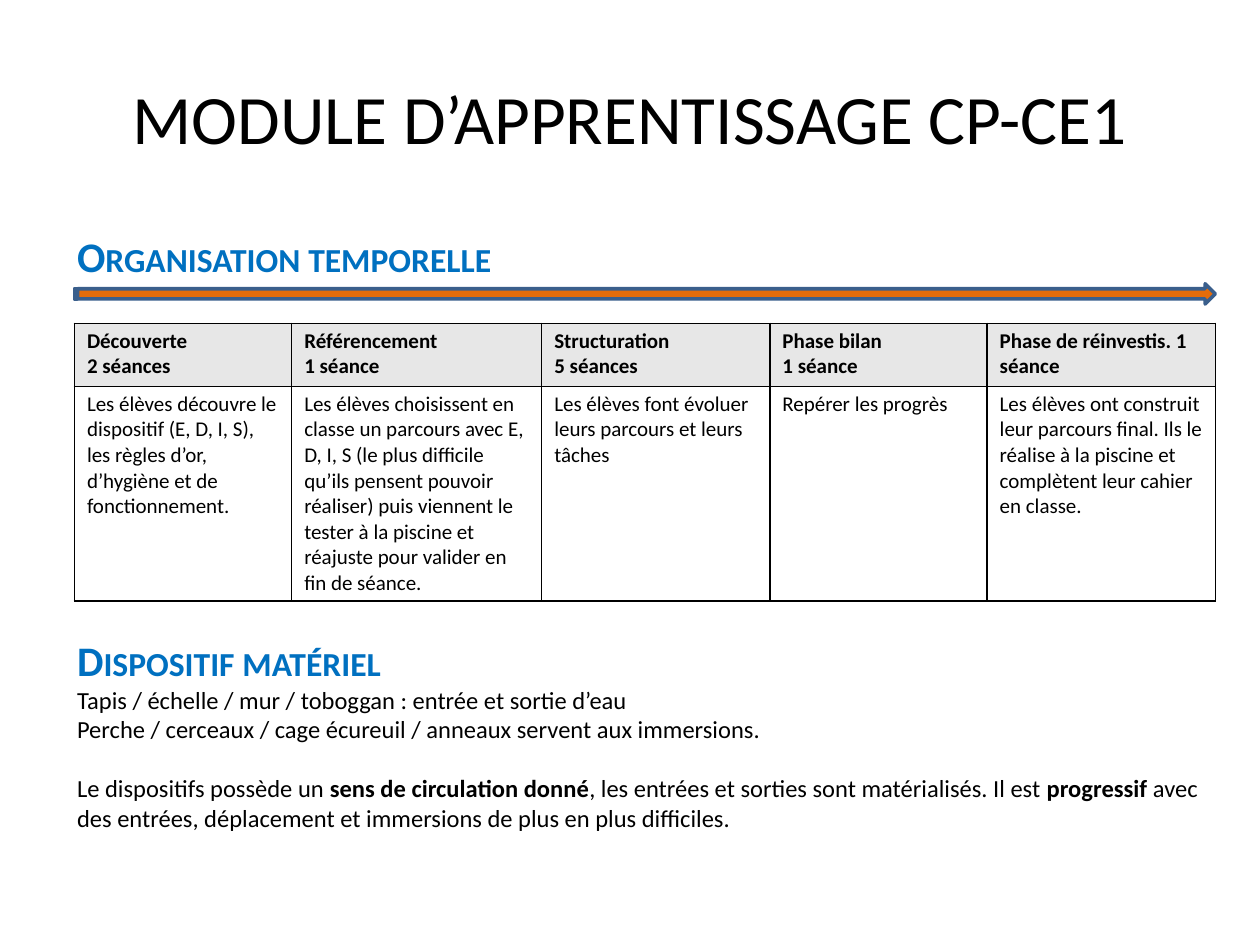
from lxml import etree
from pptx import Presentation
from pptx import util as u
from pptx.dml.color import RGBColor
from pptx.enum import shapes, text
from pptx.oxml.ns import qn

FONT, BLACK, BLUE = "Calibri", "000000", "0070C0"
TITLE = "MODULE D’APPRENTISSAGE CP-CE1"
HEAD = dict(size=24, tint=BLUE, bold=True, caps=True)
BODY = [
    (0, [("Organisation temporelle", HEAD)]),
    (202, [("Dispositif matériel", HEAD)]),
    (0, [("Tapis / échelle / mur / toboggan : entrée et sortie d’eau", {})]),
    (0, [("Perche / cerceaux / cage écureuil / anneaux servent aux immersions.", {})]),
    (17, [
        ("Le dispositifs possède un ", {}),
        ("sens de circulation donné", dict(bold=True)),
        (", les entrées et sorties sont matérialisés. Il est ", {}),
        ("progressif", dict(bold=True)),
        (" avec des entrées, déplacement et immersions de plus en plus difficiles.", {}),
    ]),
]
PHASES = [
    (4.38, ["Découverte", "2 séances"],
     "Les élèves découvre le dispositif (E, D, I, S), les règles d’or, "
     "d’hygiène et de fonctionnement."),
    (5.04, ["Référencement", "1 séance"],
     "Les élèves choisissent en classe un parcours avec E, D, I, S (le plus difficile "
     "qu’ils pensent pouvoir réaliser) puis viennent le tester à la piscine et réajuste "
     "pour valider en fin de séance."),
    (4.6, ["Structuration", "5 séances"],
     "Les élèves font évoluer leurs parcours et leurs tâches"),
    (4.38, ["Phase bilan", "1 séance"], "Repérer les progrès"),
    (4.6, ["Phase de réinvestis. 1 séance"],
     "Les élèves ont construit leur parcours final. Ils le réalise à la piscine "
     "et complètent leur cahier en classe."),
]
ROWS = [1.27, 4.33]
LEFT = 1.5
WIDE = sum(phase[0] for phase in PHASES)


def color(code):
    return RGBColor.from_string(code)


def place(shape, *box):
    shape.left, shape.top, shape.width, shape.height = map(u.Cm, box)


def add_run(para, words, size=14, tint=BLACK, bold=False, caps=False):
    run = para.add_run()
    run.text = words
    font = run.font
    font.name, font.size, font.bold = FONT, u.Pt(size), bold
    font.color.rgb = color(tint)
    if caps:
        run._r.get_or_add_rPr().set("cap", "small")


def next_para(frame, index):
    return frame.add_paragraph() if index else frame.paragraphs[0]


def add_edges(cell):
    props = cell._tc.get_or_add_tcPr()
    for side in ("lnL", "lnR", "lnT", "lnB"):
        line = etree.SubElement(props, qn("a:" + side), w=str(u.Pt(1)))
        fill = etree.SubElement(line, qn("a:solidFill"))
        etree.SubElement(fill, qn("a:srgbClr"), val=BLACK)


def fill_cell(cell, lines, shade, bold):
    add_edges(cell)
    cell.fill.solid()
    cell.fill.fore_color.rgb = color(shade)
    cell.margin_top = cell.margin_bottom = u.Cm(0.1)
    for i, words in enumerate(lines):
        add_run(next_para(cell.text_frame, i), words, size=12, bold=bold)


def add_title(slide):
    title = slide.shapes.title
    place(title, 1.27, 0.76, 22.86, 3.18)
    frame = title.text_frame
    frame.auto_size = text.MSO_AUTO_SIZE.NONE
    frame.vertical_anchor = text.MSO_ANCHOR.MIDDLE
    frame.paragraphs[0].alignment = text.PP_ALIGN.CENTER
    add_run(frame.paragraphs[0], TITLE, size=39.6)


def add_body(slide):
    body = slide.placeholders[1]
    place(body, 1.3, 4.52, 23.19, 13.08)
    frame = body.text_frame
    frame.auto_size = text.MSO_AUTO_SIZE.NONE
    for i, (gap, runs) in enumerate(BODY):
        para = next_para(frame, i)
        para.space_before = u.Pt(gap)
        props = para._p.get_or_add_pPr()
        props.set("marL", "0")
        props.set("indent", "0")
        etree.SubElement(props, qn("a:buNone"))
        for words, style in runs:
            add_run(para, words, **style)


def add_phases(slide):
    box = map(u.Cm, (LEFT, 6.52, WIDE, sum(ROWS)))
    table = slide.shapes.add_table(len(ROWS), len(PHASES), *box).table
    table.first_row = table.horz_banding = False
    for row, tall in zip(table.rows, ROWS):
        row.height = u.Cm(tall)
    for i, (wide, heads, task) in enumerate(PHASES):
        table.columns[i].width = u.Cm(wide)
        fill_cell(table.cell(0, i), heads, "E7E7E7", True)
        fill_cell(table.cell(1, i), [task], "FFFFFF", False)


def add_arrow(slide):
    box = map(u.Cm, (LEFT, 5.72, WIDE, 0.41))
    arrow = slide.shapes.add_shape(shapes.MSO_SHAPE.STRIPED_RIGHT_ARROW, *box)
    arrow.shadow.inherit = False
    arrow.fill.solid()
    arrow.fill.fore_color.rgb = color("E46C0A")
    arrow.line.color.rgb = color("3A5F8C")
    arrow.line.width = u.Pt(2)


def main():
    deck = Presentation()
    deck.slide_width, deck.slide_height = u.Cm(25.4), u.Cm(19.05)
    slide = deck.slides.add_slide(deck.slide_layouts[1])
    for add in (add_title, add_body, add_phases, add_arrow):
        add(slide)
    deck.save("out.pptx")


if __name__ == "__main__":
    main()
